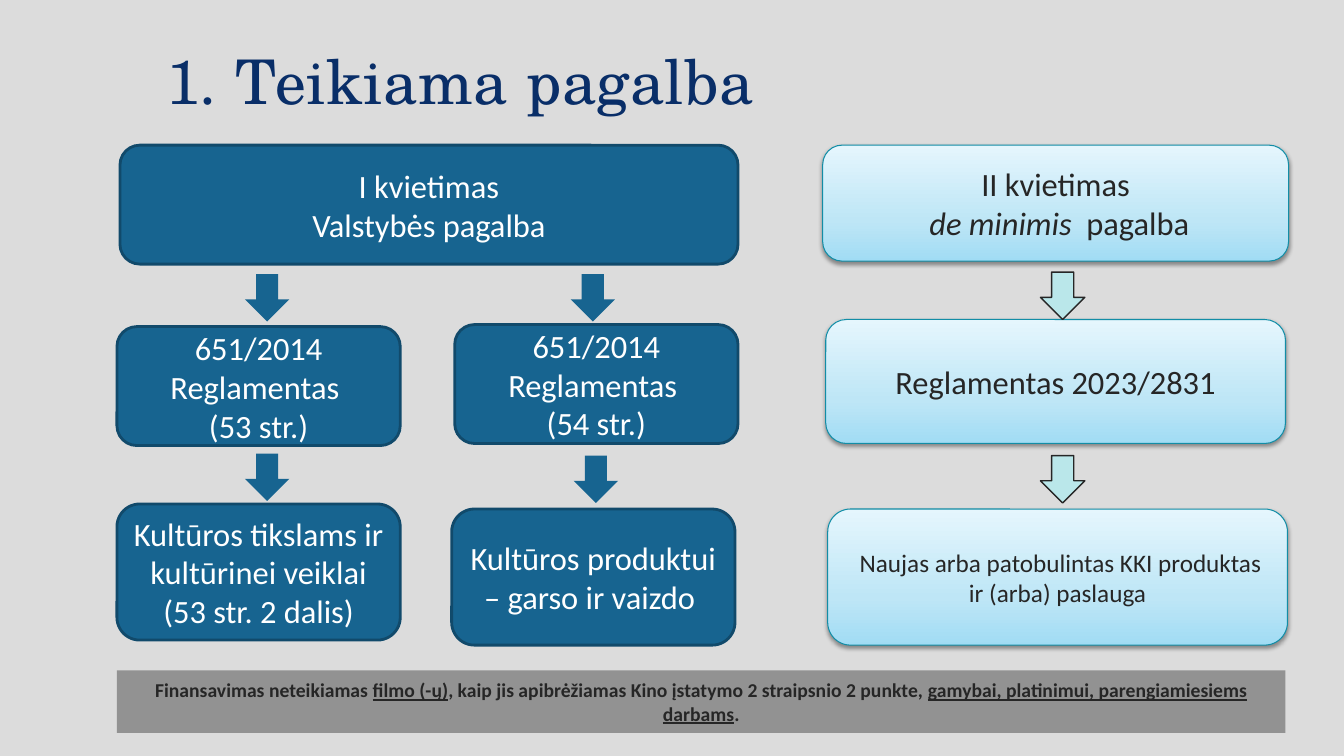
"""Builds the slide comparing the two calls and the support they offer."""
from lxml import etree
from pptx import Presentation
from pptx.dml.color import RGBColor
from pptx.enum.shapes import MSO_SHAPE
from pptx.enum.text import MSO_ANCHOR, MSO_AUTO_SIZE, PP_ALIGN
from pptx.oxml.ns import qn
from pptx.util import Inches, Pt

ROUNDED = MSO_SHAPE.ROUNDED_RECTANGLE
BAR = MSO_SHAPE.RECTANGLE
DOWN = MSO_SHAPE.DOWN_ARROW
CENTER = PP_ALIGN.CENTER
JUSTIFY = PP_ALIGN.JUSTIFY
TOP = MSO_ANCHOR.TOP
MIDDLE = MSO_ANCHOR.MIDDLE
NO_FIT = MSO_AUTO_SIZE.NONE
TITLE_ONLY = 5


def rgb(value):
    """Turn a hex string into a colour."""
    return RGBColor.from_string(value)


class SupportSlide:
    """Holds the style and the slide being drawn."""

    BACKGROUND, NAVY, INK, WHITE = "DCDCDC", "092E68", "262626", "FFFFFF"
    BLUE, BLUE_EDGE, SKY_EDGE = "176490", "114A6B", "128DA6"
    MINT, GREY = "BAE7EA", "929292"
    SKY_STOPS = ((0, "A1DCF4"), (35, "BEE6F6"), (100, "E5F6FD"))
    BODY_FONT, TITLE_FONT = "Calibri", "TeX Gyre Schola"
    BODY_SIZE = 23.2

    def __init__(self, deck):
        """Add a slide with the plain background."""
        self.slide = deck.slides.add_slide(deck.slide_layouts[TITLE_ONLY])
        fill = self.slide.background.fill
        fill.solid()
        fill.fore_color.rgb = rgb(self.BACKGROUND)

    def style_font(self, font, size, color, name=BODY_FONT):
        """Set size, colour and typeface of a font."""
        font.size, font.name = Pt(size), name
        font.color.rgb = rgb(color)

    def title(self, wording, left, top, width, height):
        """Fill and place the title placeholder."""
        heading = self.slide.shapes.title
        heading.left, heading.top = Inches(left), Inches(top)
        heading.width, heading.height = Inches(width), Inches(height)
        frame = heading.text_frame
        frame.text = wording
        frame.word_wrap, frame.auto_size = True, NO_FIT
        frame.vertical_anchor = TOP
        paragraph = frame.paragraphs[0]
        paragraph.alignment = JUSTIFY
        paragraph.line_spacing, paragraph.space_after = 0.8, Pt(12)
        font = paragraph.runs[0].font
        self.style_font(font, 44, self.NAVY, self.TITLE_FONT)
        font.bold = False
        paragraph.runs[0]._r.get_or_add_rPr().set("spc", "40")

    def shape(self, kind, place, fill, edge=None, edge_width=1):
        """Add a flat preset shape."""
        shape = self.slide.shapes.add_shape(kind, *map(Inches, place))
        shape.shadow.inherit = False
        shape.fill.solid()
        shape.fill.fore_color.rgb = rgb(fill)
        if edge:
            shape.line.color.rgb = rgb(edge)
            shape.line.width = Pt(edge_width)
        else:
            shape.line.fill.background()
        return shape

    def label(self, shape, paragraphs, size, color, bold=False):
        """Set centred paragraphs, each a list of (wording, emphasis) runs."""
        frame = shape.text_frame
        frame.word_wrap, frame.vertical_anchor = True, MIDDLE
        for index, parts in enumerate(paragraphs):
            paragraph = frame.add_paragraph() if index else frame.paragraphs[0]
            paragraph.alignment = CENTER
            for wording, emphasis in parts:
                run = paragraph.add_run()
                run.text = wording
                self.style_font(run.font, size, color)
                run.font.bold = bold
                run.font.italic = emphasis == "italic"
                run.font.underline = emphasis == "underline"

    def blue_box(self, place, *lines):
        """Add a dark blue box of the first call."""
        box = self.shape(ROUNDED, place, self.BLUE, self.BLUE_EDGE, 2)
        self.label(box, [[(line, None)] for line in lines], self.BODY_SIZE, self.WHITE)

    def sky_box(self, place, paragraphs, size=BODY_SIZE):
        """Add a light gradient box of the second call."""
        box = self.shape(ROUNDED, place, self.WHITE, self.SKY_EDGE, 0.75)
        box.fill.gradient()
        box.fill.gradient_angle = 90
        properties = box._element.spPr
        stops = properties.find(".//" + qn("a:gsLst"))
        stops.clear()
        for position, color in self.SKY_STOPS:
            stop = etree.SubElement(stops, qn("a:gs"), pos=str(position * 1000))
            etree.SubElement(stop, qn("a:srgbClr"), val=color)
        shadow = etree.SubElement(
            properties.find(qn("a:effectLst")), qn("a:outerShdw"),
            blurRad=str(Pt(3.1)), dist=str(Pt(1.6)), dir="5400000", rotWithShape="0")
        shade = etree.SubElement(shadow, qn("a:srgbClr"), val="000000")
        etree.SubElement(shade, qn("a:alpha"), val="38000")
        self.label(box, paragraphs, size, self.INK)

    def arrow(self, left, top, fill, edge=None):
        """Add a block arrow pointing down."""
        self.shape(DOWN, (left, top, 0.44, 0.47), fill, edge)

    def note(self, place, parts):
        """Add the grey bar with the bold remark."""
        self.label(self.shape(BAR, place, self.GREY), [parts], 14, self.INK, bold=True)


def main():
    """Build and save the deck."""
    deck = Presentation()
    deck.slide_width, deck.slide_height = Inches(13.33), Inches(7.5)
    page = SupportSlide(deck)
    page.title("1. Teikiama pagalba", 1.55, 0.52, 11.14, 1.1)

    page.blue_box((1.19, 1.44, 6.13, 1.18), "I kvietimas", "Valstybės pagalba")
    for left, top, article in ((1.16, 3.24, 53), (4.51, 3.22, 54)):
        page.blue_box((left, top, 2.81, 1.18), "651/2014 Reglamentas ", f"({article} str.)")
    page.blue_box((1.16, 5, 2.81, 1.35),
                  "Kultūros tikslams ir kultūrinei veiklai", "(53 str. 2 dalis)")
    page.blue_box((4.48, 5.05, 2.81, 1.35), "Kultūros produktui – garso ir vaizdo ")

    page.sky_box((8.16, 1.44, 4.62, 1.15), [
        [("II kvietimas", None)],
        [(" ", None), ("de minimis", "italic"), ("  pagalba", None)]])
    page.sky_box((8.19, 3.17, 4.56, 1.23), [[("Reglamentas 2023/2831", None)]])
    page.sky_box((8.21, 5.05, 4.56, 1.35), [
        [(" Naujas arba patobulintas KKI produktas ir (arba) paslauga", None)]],
        size=18)

    for left, top in ((2.43, 2.72), (5.66, 2.72), (2.43, 4.5), (5.69, 4.52)):
        page.arrow(left, top, page.BLUE)
    for top in (2.7, 4.52):
        page.arrow(10.32, top, page.MINT, page.INK)

    page.note((1.16, 6.65, 11.59, 0.62), [
        ("Finansavimas neteikiamas ", None),
        ("filmo (-ų)", "underline"),
        (", kaip jis apibrėžiamas Kino įstatymo 2 straipsnio 2 punkte, ", None),
        ("gamybai, platinimui, parengiamiesiems darbams", "underline"),
        (".", None)])
    deck.save("out.pptx")


if __name__ == "__main__":
    main()
